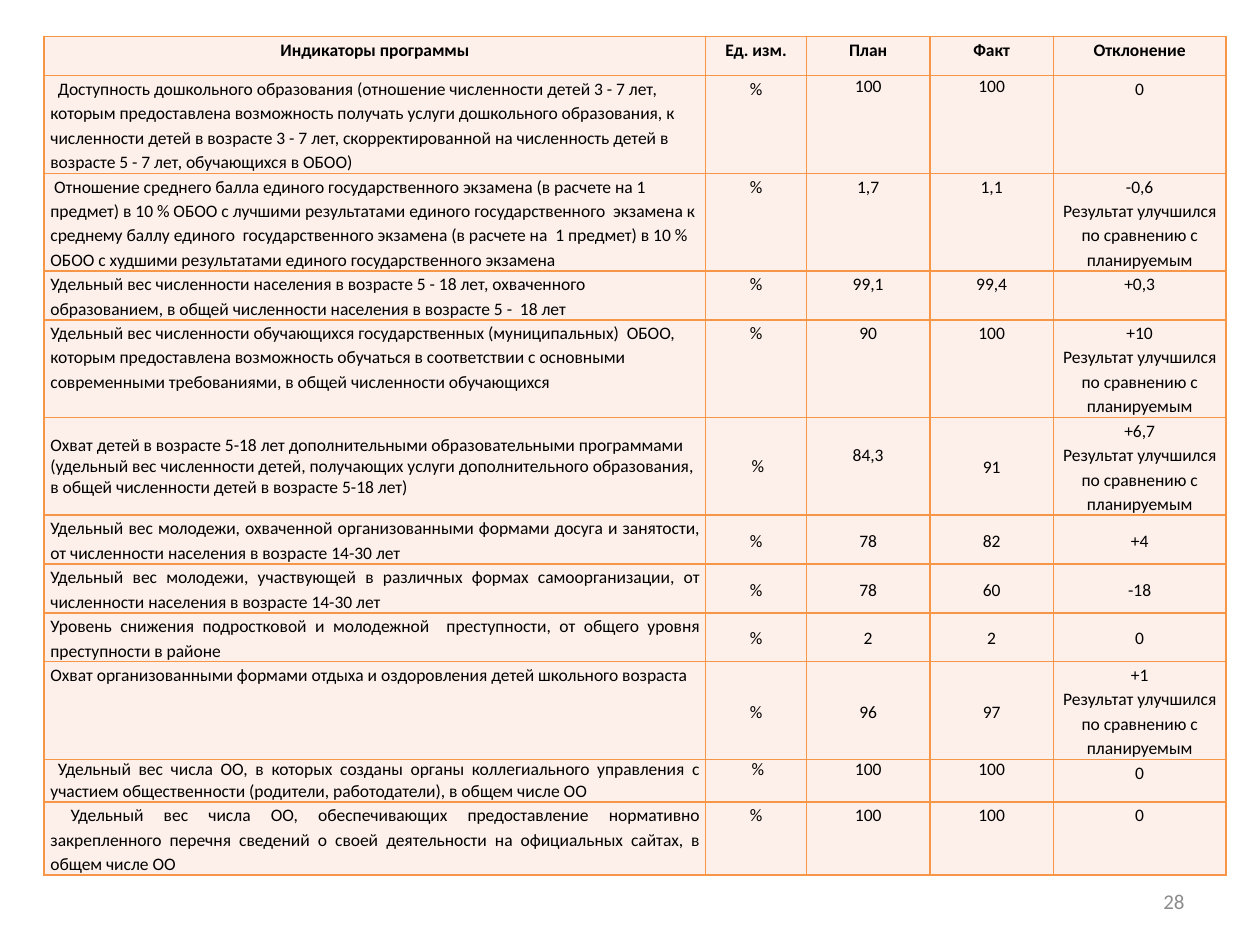
import pptx
import pptx.util
import pptx.dml.color
import pptx.enum.text
import pptx.oxml
import pptx.oxml.ns

Inches, Pt = pptx.util.Inches, pptx.util.Pt
ALIGN = pptx.enum.text.PP_ALIGN
ANCHOR = pptx.enum.text.MSO_ANCHOR

BETTER = "Результат улучшился по сравнению с планируемым"
HEADS = ("Индикаторы программы", "Ед. изм.", "План", "Факт", "Отклонение")
GOALS = [
    ("Доступность дошкольного образования (отношение численности детей 3 - 7 лет, которым предоставлена возможность получать услуги дошкольного образования, к численности детей в возрасте 3 - 7 лет, скорректированной на численность детей в возрасте 5 - 7 лет, обучающихся в ОБОО)",
     "%", "100", "100", "0"),
    ("Отношение среднего балла единого государственного экзамена (в расчете на 1 предмет) в 10 % ОБОО с лучшими результатами единого государственного  экзамена к среднему баллу единого  государственного экзамена (в расчете на  1 предмет) в 10 % ОБОО с худшими результатами единого государственного экзамена",
     "%", "1,7", "1,1", "-0,6\n" + BETTER),
    ("Удельный вес численности населения в возрасте 5 - 18 лет, охваченного образованием, в общей численности населения в возрасте 5 -  18 лет",
     "%", "99,1", "99,4", "+0,3"),
    ("Удельный вес численности обучающихся государственных (муниципальных)  ОБОО, которым предоставлена возможность обучаться в соответствии с основными современными требованиями, в общей численности обучающихся",
     "%", "90", "100", "+10\n" + BETTER),
    ("Охват детей в возрасте 5-18 лет дополнительными образовательными программами (удельный вес численности детей, получающих услуги дополнительного образования, в общей численности детей в возрасте 5-18 лет)",
     "%", "84,3", "91", "+6,7\n" + BETTER),
    ("Удельный вес молодежи, охваченной организованными формами досуга и занятости, от численности населения в возрасте 14-30 лет",
     "%", "78", "82", "+4"),
    ("Удельный вес молодежи, участвующей в различных формах самоорганизации, от численности населения в возрасте 14-30 лет",
     "%", "78", "60", "-18"),
    ("Уровень снижения подростковой и молодежной  преступности, от общего уровня преступности в районе",
     "%", "2", "2", "0"),
    ("Охват организованными формами отдыха и оздоровления детей школьного возраста",
     "%", "96", "97", "+1\n" + BETTER),
    ("Удельный вес числа ОО, в которых созданы органы коллегиального управления с участием общественности (родители, работодатели), в общем числе ОО",
     "%", "100", "100", "0"),
    ("Удельный вес числа ОО, обеспечивающих предоставление нормативно закрепленного перечня сведений о своей деятельности на официальных сайтах, в общем числе ОО",
     "%", "100", "100", "0"),
]
WIDTHS = (5.25, 0.8, 0.98, 0.98, 1.37)
HEIGHTS = (0.31, 0.76, 0.76, 0.38, 0.76, 0.76, 0.38, 0.38, 0.38, 0.76, 0.33, 0.57)
TIGHT = {1: (2, 3), 5: (0, 1, 2), 10: (0, 1, 2, 3)}
INDENT = {(1, 0): 0.06, (2, 0): 0.03, (5, 1): 0.03,
          (10, 0): 0.06, (10, 1): 0.03, (11, 0): 0.16}
LIFT = {(5, 2): 0.17}
MID = range(5, 10)
JUST = range(6, 12)
ORANGE, PEACH = "F79646", "FDEFE9"
INK = {"size": Pt(10), "name": "Calibri", "bold": False}


def put(item, form):
    for key, val in form.items():
        setattr(item, key, val)


def tint(hue):
    return pptx.dml.color.RGBColor.from_string(hue)


def edge(cell):
    prop = cell._tc.get_or_add_tcPr()
    space = pptx.oxml.ns.nsdecls("a")
    for side in "LRTB":
        prop.append(pptx.oxml.parse_xml(
            f'<a:ln{side} {space} w="12700"><a:solidFill>'
            f'<a:srgbClr val="{ORANGE}"/></a:solidFill></a:ln{side}>'))


def write(cell, text, row, col):
    edge(cell)
    cell.fill.solid()
    cell.fill.fore_color.rgb = tint(PEACH)
    mid = row in MID and (col > 0 or row == 5)
    put(cell, {"margin_left": Inches(0.05), "margin_right": Inches(0.05),
               "margin_top": 0, "margin_bottom": Inches(LIFT.get((row, col), 0)),
               "vertical_anchor": ANCHOR.MIDDLE if mid else ANCHOR.TOP})
    align = ALIGN.CENTER
    if col == 0 and row > 0:
        align = ALIGN.JUSTIFY if row in JUST else ALIGN.LEFT
    cell.text_frame.text = text
    for para in cell.text_frame.paragraphs:
        put(para, {"alignment": align,
                   "line_spacing": 1.0 if col in TIGHT.get(row, ()) else 1.15})
        if (row, col) in INDENT:
            para._p.get_or_add_pPr().set("indent", str(Inches(INDENT[row, col])))
        font = para.runs[0].font
        put(font, {**INK, "bold": row == 0})
        font.color.rgb = tint("000000")


def main():
    deck = pptx.Presentation()
    put(deck, {"slide_width": Inches(10), "slide_height": Inches(7.5)})
    slide = deck.slides.add_slide(deck.slide_layouts[6])
    rows = [HEADS] + GOALS
    grid = slide.shapes.add_table(
        len(rows), len(WIDTHS), Inches(0.35), Inches(0.29),
        Inches(sum(WIDTHS)), Inches(sum(HEIGHTS))).table
    put(grid, {"first_row": False, "horz_banding": False})
    for col, width in enumerate(WIDTHS):
        grid.columns[col].width = Inches(width)
    for row, texts in enumerate(rows):
        grid.rows[row].height = Inches(HEIGHTS[row])
        for col, text in enumerate(texts):
            write(grid.cell(row, col), text, row, col)

    page = slide.shapes.add_textbox(
        Inches(7.17), Inches(6.95), Inches(2.33), Inches(0.4)).text_frame
    put(page, {"word_wrap": True, "vertical_anchor": ANCHOR.MIDDLE, "text": "28"})
    para = page.paragraphs[0]
    para.alignment = ALIGN.RIGHT
    font = para.runs[0].font
    put(font, {**INK, "size": Pt(12)})
    font.color.rgb = tint("8C8C8C")
    deck.save("out.pptx")


if __name__ == "__main__":
    main()
